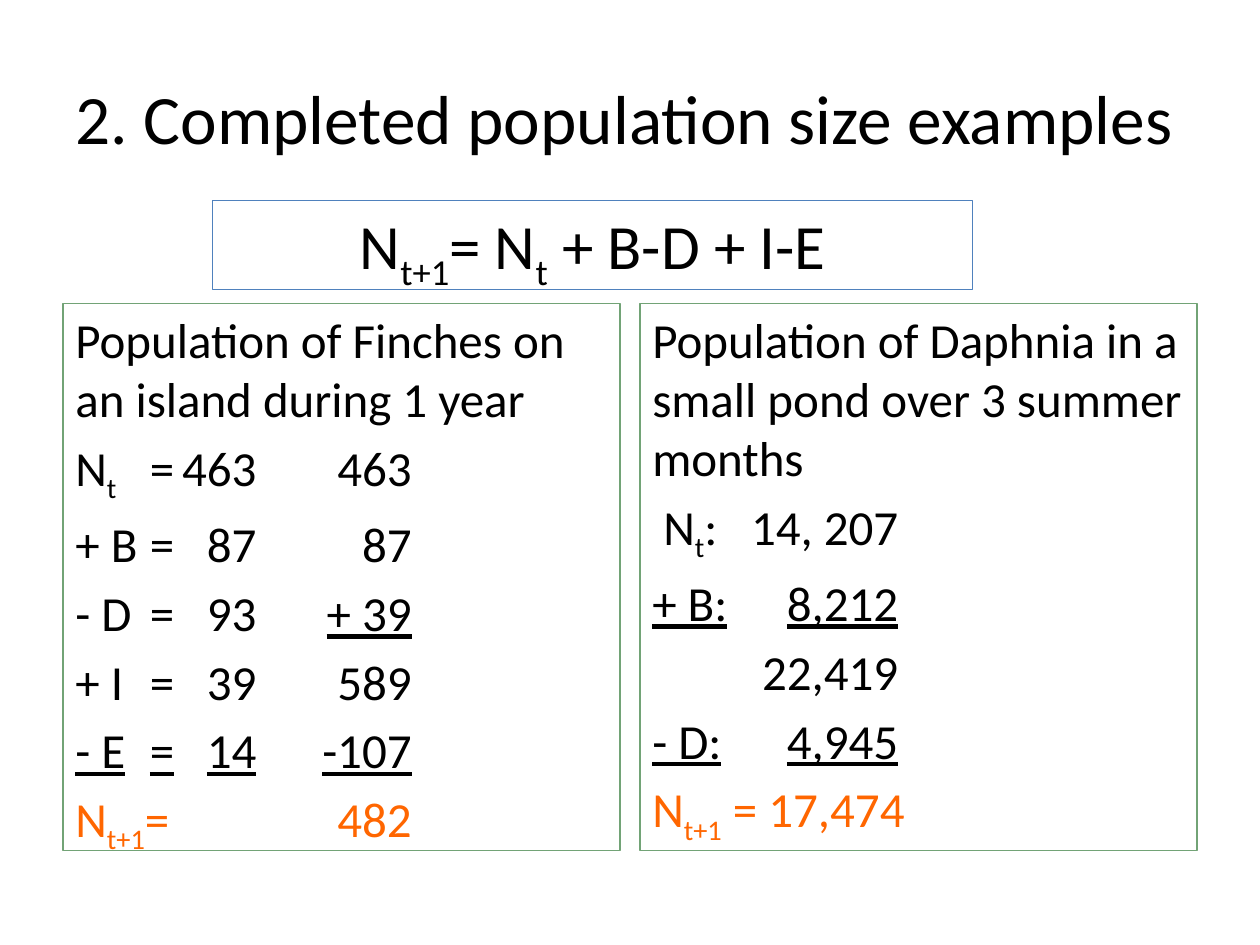
from lxml import etree
from pptx import Presentation
from pptx.dml.color import RGBColor
from pptx.enum import shapes, text
from pptx.oxml.ns import qn
from pptx.util import Cm, Pt

FONT = "Calibri"
BLACK, ORANGE, GREEN, BLUE = "000000", "FF6600", "72A376", "4F81BD"
NOW = ("N", ("t", "sub"))
NEXT = ("N", ("t+1", "sub"))

# Column tab stops: position in cm and alignment
FINCH_TABS = ((1.5, "l"), (3.65, "r"), (6.78, "r"))
DAPHNIA_TABS = ((4.96, "r"),)


def colour(value):
    return RGBColor.from_string(value)


def add_tabs(paragraph, stops):
    tab_list = etree.SubElement(paragraph._p.get_or_add_pPr(), qn("a:tabLst"))
    for position, align in stops:
        etree.SubElement(tab_list, qn("a:tab"), pos=str(int(Cm(position))), algn=align)


def write(paragraph, runs, size=28, color=BLACK, align=text.PP_ALIGN.LEFT,
          before=0, tabs=()):
    """Write runs: plain strings, or (string, "sub" or "underline") pairs."""
    paragraph.alignment = align
    paragraph.space_before = Pt(before)
    if tabs:
        add_tabs(paragraph, tabs)
    for part in runs:
        words, style = (part, None) if isinstance(part, str) else part
        run = paragraph.add_run()
        run.text = words
        run.font.name = FONT
        run.font.size = Pt(size)
        run.font.color.rgb = colour(color)
        if style == "underline":
            run.font.underline = True
        elif style == "sub":
            run._r.get_or_add_rPr().set("baseline", "-25000")


def add_box(slide, left, top, width, height, outline):
    box = slide.shapes.add_shape(shapes.MSO_SHAPE.RECTANGLE,
                                 Cm(left), Cm(top), Cm(width), Cm(height))
    box.shadow.inherit = False
    box.fill.background()
    box.line.color.rgb = colour(outline)
    box.line.width = Pt(0.75)
    frame = box.text_frame
    frame.word_wrap = True
    frame.vertical_anchor = text.MSO_ANCHOR.TOP
    return frame


def add_title(slide, words):
    title = slide.shapes.add_textbox(Cm(1.27), Cm(0.76), Cm(22.86), Cm(3.18))
    frame = title.text_frame
    frame.word_wrap = True
    frame.vertical_anchor = text.MSO_ANCHOR.MIDDLE
    write(frame.paragraphs[0], [words], size=39.6)


def add_example(slide, left, heading, steps, result, tabs):
    frame = add_box(slide, left, 6.12, 11.23, 11.02, GREEN)
    write(frame.paragraphs[0], [heading], before=5.6)
    for step in steps:
        write(frame.add_paragraph(), step, before=5.6, tabs=tabs)
    write(frame.add_paragraph(), result, color=ORANGE, before=5.6, tabs=tabs)


def main():
    deck = Presentation()
    deck.slide_width, deck.slide_height = Cm(25.4), Cm(19.05)
    slide = deck.slides.add_slide(deck.slide_layouts[6])

    add_title(slide, "2. Completed population size examples")

    # Worked examples
    add_example(
        slide, 1.27, "Population of Finches on an island during 1 year",
        [(*NOW, "\t=\t463\t463"),
         ["+ B\t=\t87\t87"],
         ["- D\t=\t93\t", ("+ 39", "underline")],
         ["+ I\t=\t39\t589"],
         [("- E\t=\t14\t-107", "underline")]],
        (*NEXT, "=\t\t482"), FINCH_TABS)
    add_example(
        slide, 12.9, "Population of Daphnia in a small pond over 3 summer months",
        [(" ", *NOW, ":\t14, 207"),
         [("+ B:\t8,212", "underline")],
         ["\t22,419"],
         [("- D:\t4,945", "underline")]],
        (*NEXT, " = 17,474"), DAPHNIA_TABS)

    # Growth formula
    formula = add_box(slide, 4.29, 4.04, 15.32, 1.8, BLUE)
    write(formula.paragraphs[0], (*NEXT, "= ", *NOW, " + B-D + I-E"),
          size=36, align=text.PP_ALIGN.CENTER)

    deck.save("out.pptx")


if __name__ == "__main__":
    main()
